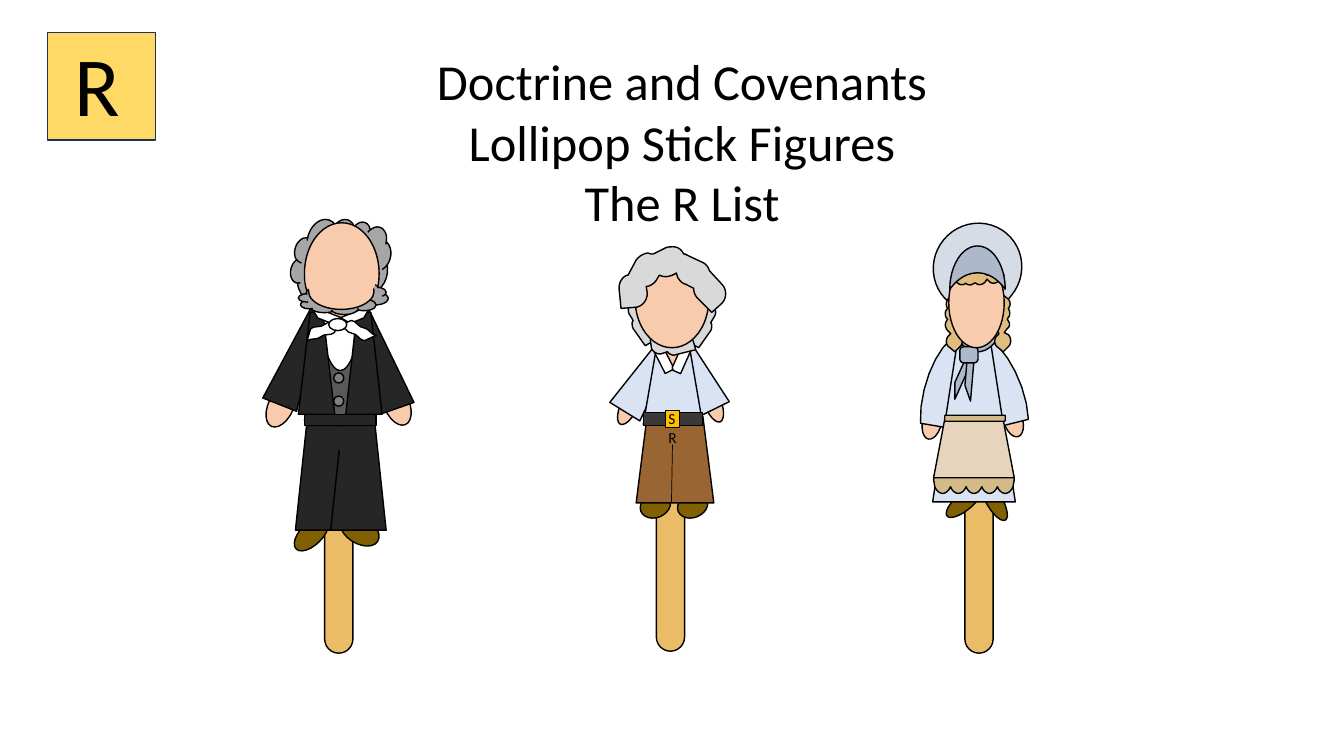
import math

from pptx import Presentation
from pptx.dml.color import RGBColor
from pptx.enum import shapes, text
from pptx.oxml.ns import qn
from pptx.util import Inches, Pt

KIND = shapes.MSO_SHAPE
BLACK, WHITE, SKIN, SHOE, WOOD = "000000", "FFFFFF", "F8CBAD", "806000", "EABC68"
SUIT, GREY_HAIR, PALE_HAIR, BLOND = "262626", "A6A6A6", "D9D9D9", "E1BC7F"
PALE_BLUE, SLATE, TRIM = "DAE3F3", "ADB9CA", "D3BA89"

# Outlines in slide inches: M start, L line, C cubic curve
LEFT_SLEEVE = "M 9.37 4.24 L 9.77 3.38 L 9.6 3.33 C 9.39 3.23 9.11 3.77 9.13 4.2"
RIGHT_SLEEVE = "M 9.96 4.22 L 9.49 3.42 L 9.65 3.35 C 9.85 3.23 10.18 3.74 10.2 4.16"
BRAID = """M 9.45 2.91 L 9.51 2.96 C 9.54 2.98 9.55 3.03 9.52 3.06 C 9.54 3.09 9.54 3.13 9.52 3.15
L 9.51 3.17 C 9.54 3.2 9.54 3.24 9.51 3.26 L 9.48 3.3 L 9.52 3.32 C 9.55 3.35 9.55 3.4 9.53 3.43
L 9.47 3.49 L 9.41 3.44 C 9.38 3.42 9.38 3.37 9.4 3.34 L 9.43 3.31 L 9.4 3.28
C 9.37 3.25 9.37 3.21 9.39 3.18 L 9.4 3.17 L 9.39 3.16 C 9.37 3.13 9.37 3.09 9.39 3.07
L 9.4 3.06 C 9.38 3.04 9.38 3 9.4 2.97"""
FRINGE = """M 9.45 2.77 L 9.49 2.72 C 9.52 2.69 9.56 2.68 9.58 2.7 L 9.59 2.71
C 9.61 2.69 9.64 2.69 9.67 2.7 L 9.67 2.71 L 9.68 2.7 C 9.71 2.69 9.74 2.68 9.76 2.7
L 9.79 2.73 L 9.81 2.7 C 9.84 2.67 9.88 2.66 9.9 2.69 L 9.96 2.73 L 9.91 2.78
C 9.89 2.81 9.85 2.82 9.82 2.8 L 9.79 2.77 L 9.77 2.8 C 9.74 2.83 9.7 2.83 9.68 2.81
L 9.66 2.81 C 9.64 2.83 9.61 2.83 9.59 2.82 L 9.58 2.81 C 9.56 2.83 9.52 2.83 9.5 2.81"""
SIDE_BEARD = """M 6.33 2.97 L 6.45 3.14 C 6.46 3.16 6.47 3.18 6.46 3.2 L 6.45 3.23 L 6.49 3.28
C 6.51 3.31 6.5 3.36 6.47 3.39 L 6.4 3.43 L 6.28 3.26 C 6.27 3.24 6.27 3.22 6.27 3.2
L 6.28 3.18 L 6.25 3.13 C 6.22 3.09 6.23 3.04 6.26 3.02"""
CHIN_BEARD = """M 6.45 3.37 L 6.65 3.32 C 6.67 3.32 6.69 3.32 6.71 3.33 L 6.73 3.35 L 6.79 3.34
C 6.83 3.33 6.87 3.35 6.88 3.4 L 6.9 3.47 L 6.7 3.52 C 6.68 3.53 6.66 3.52 6.64 3.51
L 6.62 3.49 L 6.56 3.51 C 6.52 3.52 6.47 3.49 6.46 3.45"""
TOP_HAIR = """M 6.65 2.45 C 6.71 2.44 6.76 2.47 6.78 2.52 L 6.79 2.52 L 6.96 2.6
C 6.99 2.61 7.02 2.64 7.03 2.67 L 7.04 2.69 L 7.16 2.82 C 7.21 2.87 7.21 2.96 7.16 3.01
L 7.06 3.1 L 6.92 2.96 C 6.89 2.93 6.88 2.89 6.88 2.86 L 6.8 2.82
C 6.76 2.81 6.74 2.78 6.72 2.75 L 6.71 2.71 L 6.67 2.73 C 6.62 2.75 6.58 2.75 6.54 2.73
L 6.51 2.78 C 6.49 2.81 6.46 2.83 6.43 2.84 L 6.41 2.84 L 6.42 2.91
C 6.42 2.98 6.37 3.05 6.29 3.05 L 6.16 3.06 L 6.14 2.86 C 6.14 2.8 6.17 2.75 6.22 2.73
L 6.23 2.73 L 6.31 2.58 C 6.34 2.54 6.38 2.52 6.42 2.51 C 6.43 2.51 6.45 2.52 6.46 2.52
L 6.48 2.52 L 6.6 2.46 C 6.62 2.45 6.64 2.45 6.65 2.45"""


def rgb(value):
    return RGBColor.from_string(value)


def paint(shape, fill, line=BLACK):
    shape.shadow.inherit = False
    shape.fill.solid()
    shape.fill.fore_color.rgb = rgb(fill)
    if line:
        shape.line.color.rgb = rgb(line)
        shape.line.width = Pt(1)
    else:
        shape.line.fill.background()


def part(figure, kind, box, fill, turn=0, adjust=None, flip=False, line=BLACK):
    shape = figure.shapes.add_shape(kind, *map(Inches, box))
    paint(shape, fill, line)
    shape.rotation = turn
    if adjust is not None:
        for index, value in enumerate(adjust):
            shape.adjustments[index] = value
    if flip:
        shape.element.spPr.find(qn("a:xfrm")).set("flipH", "1")


def trace(outline, steps=8):
    """Turn an outline into points, with its curves sampled."""
    points, numbers = [], []
    for token in outline.split():
        if token in "MLC":
            command, numbers = token, []
            continue
        numbers.append(float(token))
        if command in "ML" and len(numbers) == 2:
            points.append(tuple(numbers))
        elif command == "C" and len(numbers) == 6:
            bends = [points[-1], *zip(numbers[::2], numbers[1::2])]
            for step in range(1, steps + 1):
                t = step / steps
                weights = [math.comb(3, i) * t**i * (1 - t) ** (3 - i) for i in range(4)]
                points.append(tuple(sum(w * p[axis] for w, p in zip(weights, bends))
                                    for axis in (0, 1)))
    return points


def freeform(figure, points, fill):
    points = [(Inches(x), Inches(y)) for x, y in points]
    builder = figure.shapes.build_freeform(*points[0])
    builder.add_line_segments(points[1:], close=True)
    paint(builder.convert_to_shape(), fill)


def scallops(left=9.35, middle=4.76, count=5, gap=0.155, rx=0.09, ry=0.135):
    """Overlapping ovals in a row, as one outline."""
    start = math.degrees(math.acos(gap / 2 / rx))
    angles = [start + (180 - 2 * start) * step / 10 for step in range(11)]
    lower = [(left + lobe * gap + rx * math.cos(math.radians(a)),
              middle + ry * math.sin(math.radians(a)))
             for lobe in reversed(range(count)) for a in angles]
    upper = [(x, 2 * middle - y) for x, y in reversed(lower)]
    return lower + [(left - rx, middle)] + upper + [(left + (count - 1) * gap + rx, middle)]


def label(owner, words, box, size):
    frame = owner.shapes.add_textbox(*map(Inches, box)).text_frame
    frame.word_wrap = True
    frame.text = words
    font = frame.paragraphs[0].font
    font.name, font.size, font.color.rgb = "Calibri", Pt(size), rgb(BLACK)


def heading(slide, lines):
    title = slide.shapes.title
    title.left, title.top, title.width, title.height = map(Inches, (3.92, 0.45, 5.69, 2.52))
    frame = title.text_frame
    frame.text = "\n".join(lines)
    frame.word_wrap = True
    frame.auto_size = text.MSO_AUTO_SIZE.NONE
    frame.vertical_anchor = text.MSO_ANCHOR.TOP
    for paragraph in frame.paragraphs:
        paragraph.alignment = text.PP_ALIGN.CENTER
        paragraph.line_spacing = 1.0
        font = paragraph.font
        font.name, font.size, font.color.rgb = "Calibri", Pt(36), rgb(BLACK)


def stick(slide, left, top=4.26):
    part(slide, KIND.ROUNDED_RECTANGLE, (left, top, 0.28, 2.22), WOOD, adjust=[0.5])


def bonnet_woman(figure):
    # Shoes, hands and dress
    part(figure, KIND.OVAL, (9.48, 4.75, 0.17, 0.45), SHOE, 49.8)
    part(figure, KIND.OVAL, (9.78, 4.74, 0.16, 0.45), SHOE, 330.3)
    part(figure, KIND.OVAL, (9.15, 4, 0.19, 0.36), SKIN, 12.1)
    part(figure, KIND.OVAL, (9.95, 3.98, 0.19, 0.36), SKIN, 342.7)
    for sleeve in (LEFT_SLEEVE, RIGHT_SLEEVE):
        freeform(figure, trace(sleeve), PALE_BLUE)
    part(figure, KIND.TRAPEZOID, (9.25, 3.21, 0.82, 1.77), PALE_BLUE, adjust=[0.334])
    # Collar, bonnet brim and scarf
    part(figure, KIND.MOON, (9.48, 3, 0.43, 0.55), SLATE, 270, [0.183])
    part(figure, KIND.TEAR, (9.25, 2.22, 0.89, 0.87), "D6DCE5", 129.9)
    for left, turn in ((9.47, 0), (9.55, 340.5)):
        part(figure, KIND.DIAGONAL_STRIPE, (left, 3.54, 0.19, 0.42), SLATE, turn, [0.606])
    part(figure, KIND.ROUNDED_RECTANGLE, (9.52, 3.44, 0.18, 0.16), SLATE, adjust=[0.236])
    # Apron
    freeform(figure, scallops(), TRIM)
    part(figure, KIND.TRAPEZOID, (9.26, 4.13, 0.8, 0.61), "E6D5BC", adjust=[0.191])
    part(figure, KIND.ROUND_2_DIAG_RECTANGLE, (9.37, 4.12, 0.6, 0.06), TRIM)
    # Braids, head and bonnet
    for shift in (0, 0.48):
        freeform(figure, [(x + shift, y) for x, y in trace(BRAID)], BLOND)
    part(figure, KIND.OVAL, (9.41, 2.56, 0.55, 0.89), SKIN)
    freeform(figure, trace(FRINGE), BLOND)
    part(figure, KIND.MOON, (9.48, 2.38, 0.43, 0.55), SLATE, 90, [0.619])


def suited_man(figure):
    # Hands, sleeves, hair, shirt and shoes
    part(figure, KIND.OVAL, (2.66, 3.81, 0.25, 0.44), SKIN, 25)
    part(figure, KIND.OVAL, (3.81, 3.79, 0.25, 0.44), SKIN, 337)
    part(figure, KIND.TRAPEZOID, (2.78, 3.04, 0.36, 1.01), SUIT, 21.6, [0.324])
    part(figure, KIND.TRAPEZOID, (3.59, 3.07, 0.36, 1.01), SUIT, 340.7, [0.324])
    part(figure, KIND.OVAL, (2.98, 5.08, 0.22, 0.43), SHOE, 45.1)
    part(figure, KIND.CLOUD, (2.9, 2.15, 0.95, 0.95), GREY_HAIR, 17.6)
    part(figure, KIND.TRAPEZOID, (3.02, 3.16, 0.71, 1.01), WHITE)
    part(figure, KIND.OVAL, (3.43, 5.04, 0.27, 0.43), SHOE, 302.7)
    # Trousers, head, waistcoat and jacket
    for left in (2.93, 3.28):
        part(figure, KIND.FLOWCHART_MANUAL_OPERATION, (left, 4.22, 0.55, 1.04), SUIT, 180)
    part(figure, KIND.OVAL, (3.26, 4.23, 0.3, 0.24), SUIT, line=None)
    part(figure, KIND.OVAL, (3.02, 2.21, 0.74, 1.01), SKIN)
    part(figure, KIND.MOON, (2.96, 3.58, 0.83, 0.36), "595959", 270, [0.601])
    for left, slant in ((3.43, 0.309), (2.96, 0.324)):
        part(figure, KIND.TRAPEZOID, (left, 3.1, 0.36, 1.01), SUIT, adjust=[slant])
    part(figure, KIND.RECTANGLE, (3.02, 4.11, 0.71, 0.11), SUIT)
    for top in (3.7, 3.93):
        part(figure, KIND.OVAL, (3.31, top, 0.1, 0.1), "808080")
    # Collar and bow tie
    for left, turn, flip in ((3.4, 120.7, True), (3.1, 239.3, False)):
        part(figure, KIND.DIAGONAL_STRIPE, (left, 2.99, 0.26, 0.2), WHITE, turn, [0.443], flip)
    for left, turn in ((3.02, 342.4), (3.37, 30.8)):
        part(figure, KIND.DOUBLE_WAVE, (left, 3.22, 0.36, 0.12), WHITE, turn, [0.062, -0.1])
    part(figure, KIND.OVAL, (3.26, 3.16, 0.18, 0.12), WHITE)
    # Beard and chin
    part(figure, KIND.CLOUD, (2.96, 2.81, 0.89, 0.31), GREY_HAIR)
    part(figure, KIND.OVAL, (3.06, 2.71, 0.65, 0.36), SKIN)
    part(figure, KIND.OVAL, (3.03, 2.57, 0.7, 0.42), SKIN, line=None)


def belted_man(figure):
    # Shoes, hands and shirt
    for left in (6.75, 6.38):
        part(figure, KIND.OVAL, (left, 4.86, 0.24, 0.31), SHOE, 67.5)
    part(figure, KIND.OVAL, (6.98, 3.77, 0.17, 0.43), SKIN, 338.7)
    part(figure, KIND.OVAL, (6.16, 3.8, 0.17, 0.43), SKIN, 25.6)
    part(figure, KIND.TRAPEZOID, (6.74, 3.37, 0.35, 0.73), PALE_BLUE, 333.8)
    part(figure, KIND.TRAPEZOID, (6.22, 3.39, 0.35, 0.75), PALE_BLUE, 31.8)
    part(figure, KIND.TRAPEZOID, (6.38, 3.35, 0.59, 0.86), PALE_BLUE)
    part(figure, KIND.ISOSCELES_TRIANGLE, (6.5, 3.32, 0.31, 0.35), SKIN, 180, [0.465])
    # Trousers, belt and buckle
    part(figure, KIND.TRAPEZOID, (6.31, 4.13, 0.77, 0.86), "996633", adjust=[0.141])
    part(figure, KIND.RECTANGLE, (6.38, 4.09, 0.59, 0.13), "3B3838")
    part(figure, KIND.RECTANGLE, (6.6, 4.07, 0.14, 0.17), "FFC000")
    seam = figure.shapes.add_connector(shapes.MSO_CONNECTOR.STRAIGHT,
                                       *map(Inches, (6.67, 4.41, 6.66, 4.98)))
    seam.line.color.rgb, seam.line.width = rgb(BLACK), Pt(0.5)
    seam.element.spPr.append(seam.element.spPr.makeelement(qn("a:effectLst"), {}))
    # Collar, beard, head and hair
    for left, turn, flip in ((6.52, 333, False), (6.72, 23.9, True)):
        part(figure, KIND.SNIP_2_DIAG_RECTANGLE, (left, 3.38, 0.1, 0.32), WHITE, turn,
             [0.208, 0], flip)
    beard = trace(SIDE_BEARD)
    freeform(figure, beard, PALE_HAIR)
    freeform(figure, [(13.33 - x, y + 0.02) for x, y in beard], PALE_HAIR)
    freeform(figure, trace(CHIN_BEARD), PALE_HAIR)
    part(figure, KIND.OVAL, (6.3, 2.49, 0.73, 0.96), SKIN)
    freeform(figure, trace(TOP_HAIR), PALE_HAIR)
    label(figure, "SR", (6.53, 4.01, 0.31, 0.29), 11)


def main():
    deck = Presentation()
    deck.slide_width, deck.slide_height = Inches(13.33), Inches(7.5)
    slide = deck.slides.add_slide(deck.slide_layouts[5])
    heading(slide, ["Doctrine and Covenants", "Lollipop Stick Figures", "The R List"])
    # Figures on their sticks
    for draw, left, top in ((bonnet_woman, 9.57, 4.26), (suited_man, 3.22, 4.26),
                            (belted_man, 6.51, 4.24)):
        stick(slide, left, top)
        draw(slide.shapes.add_group_shape())
    # Letter badge
    badge = slide.shapes.add_group_shape()
    part(badge, KIND.RECTANGLE, (0.47, 0.32, 1.07, 1.07), "FFD966", line="1E3256")
    label(badge, "R", (0.64, 0.27, 0.81, 1.11), 60)
    deck.save("out.pptx")


if __name__ == "__main__":
    main()
